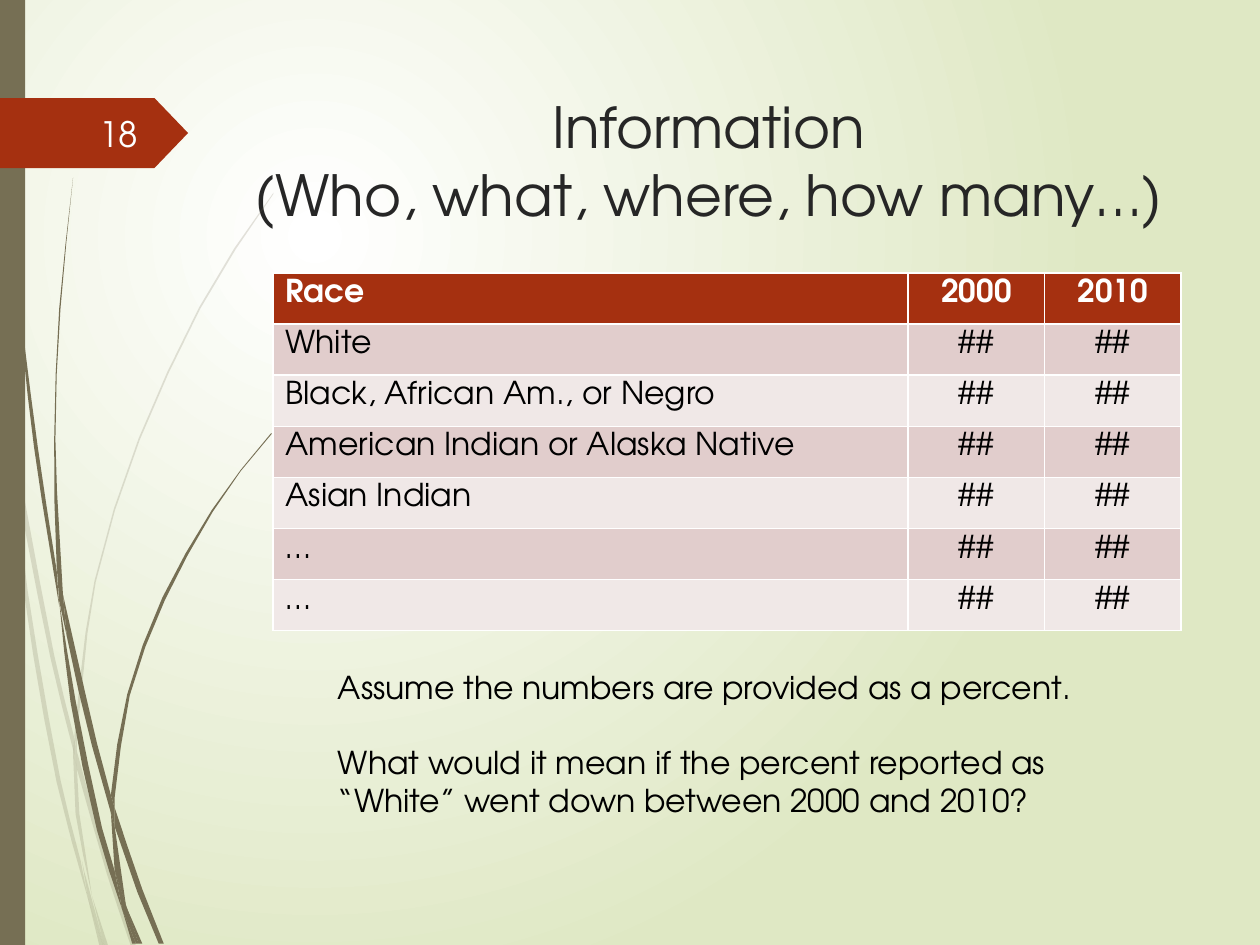
from math import dist

from pptx import Presentation
from pptx.dml.color import RGBColor
from pptx.enum.shapes import MSO_SHAPE as Kind
from pptx.enum.text import MSO_ANCHOR as Anchor, MSO_AUTO_SIZE as Fit, PP_ALIGN as Align
from pptx.oxml import parse_xml
from pptx.oxml.ns import nsdecls, qn
from pptx.util import Pt

FACE = "TeX Gyre Adventor"
RUST, BARK, WHITE, BLACK = "A53010", "766F54", "FFFFFF", "000000"
BANDS = "E1CDCC", "F0E8E7"
RACES = ["White", "Black, African Am., or Negro",
         "American Indian or Alaska Native", "Asian Indian", "…", "…"]
ROWS = [["Race", "2000", "2010"]] + [[race, "##", "##"] for race in RACES]

# Each blade of grass has a downward and an upward edge, in units of 0.72 pt.
PALE = [
    ([(0, 282), (6, 322), (8, 350)], [(7, 344), (0, 299)]),
    ([(10, 345), (43, 520), (59, 586)],
     [(59, 599), (40, 522), (12, 376), (10, 345)]),
    ([(61, 610), (85, 694), (104, 751)],
     [(108, 751), (88, 692), (61, 596)]),
    ([(73, 711), (83, 751)], [(86, 751)]),
    ([(8, 350), (19, 470), (45, 621), (70, 714)],
     [(64, 683), (48, 619), (22, 469), (8, 350)]),
    ([(58, 599), (60, 646), (73, 711)],
     [(63, 646), (61, 608), (58, 599)]),
    ([(217, 153), (186, 197), (158, 244), (110, 348),
      (75, 461), (59, 584), (61, 596)],
     [(61, 584), (76, 462), (111, 349), (159, 245), (187, 198), (217, 154)]),
    ([(70, 714), (79, 751)], [(82, 751)]),
    ([(59, 586), (58, 599), (61, 608)], [(61, 596)]),
    ([(65, 683), (70, 714), (82, 751)], [(83, 751), (67, 692)]),
]
DARK = [
    ([(2, 0), (5, 110), (14, 233), (27, 355), (47, 481)],
     [(45, 453), (30, 355), (15, 232), (6, 109), (3, 0)]),
    ([(50, 472), (53, 505), (73, 592), (88, 645)],
     [(88, 631), (77, 590), (50, 472)]),
    ([(91, 641), (91, 656), (109, 708), (126, 749)],
     [(130, 749), (113, 706), (91, 641)]),
    ([(47, 477), (56, 557), (77, 659), (97, 722)],
     [(91, 691), (81, 657), (60, 556), (47, 477)]),
    ([(58, 141), (47, 245), (43, 349), (45, 449), (49, 472)],
     [(50, 472), (44, 349), (48, 245), (58, 141)]),
    ([(100, 719), (110, 749)], [(113, 749)]),
    ([(45, 449), (47, 477), (53, 505)], [(50, 472)]),
    ([(215, 344), (191, 373), (168, 405), (129, 474),
      (101, 551), (88, 631), (91, 641)],
     [(91, 633), (103, 552), (131, 476), (169, 406), (191, 374), (216, 344)]),
    ([(97, 722), (105, 749)], [(108, 749)]),
    ([(88, 645), (91, 691), (100, 719)], [(91, 656)]),
    ([(88, 631), (88, 645), (91, 656)], [(91, 641)]),
    ([(91, 691), (97, 722), (108, 749)], [(110, 749), (96, 706)]),
]


def color(code):
    return RGBColor.from_string(code)


def paint(shape, code, alpha=None):
    shape.shadow.inherit = False
    shape.fill.solid()
    shape.fill.fore_color.rgb = color(code)
    shape.line.fill.background()
    if alpha:
        tint = shape.element.spPr.find(".//" + qn("a:srgbClr"))
        tint.append(parse_xml(f'<a:alpha {nsdecls("a")} val="{alpha * 1000}"/>'))


def style(para, size, code, align=Align.LEFT, bold=False):
    para.alignment = align
    para.font.color.rgb = color(code)
    form = {"name": FACE, "size": Pt(size), "bold": bold}
    for key, value in form.items():
        setattr(para.font, key, value)


def place(shape, *box):
    for key, value in zip(("left", "top", "width", "height"), box):
        setattr(shape, key, Pt(value))


def smooth(knots):
    """Return points of a cubic curve through the knots, more on long spans."""
    last = len(knots) - 1
    if not last:
        return knots
    slopes = []
    for i in range(last + 1):
        a, b = knots[max(i - 1, 0)], knots[min(i + 1, last)]
        span = dist(a, knots[i]) + dist(knots[i], b)
        slopes.append([(q - p) / span for p, q in zip(a, b)])
    curve = [knots[0]]
    for a, b, m, n in zip(knots, knots[1:], slopes, slopes[1:]):
        size = dist(a, b)
        steps = min(3, 1 + int(size // 60))
        for t in (k / steps for k in range(1, steps + 1)):
            s = 1 - t
            curve.append([
                s * s * (1 + 2 * t) * p + t * t * (3 - 2 * t) * q
                + size * t * s * (s * u - t * v)
                for p, q, u, v in zip(a, b, m, n)])
    return curve


def add_blade(shapes, edges, alpha):
    dots = [(72 * x, 72 * y) for edge in edges for x, y in smooth(edge)]
    pen = shapes.build_freeform(*dots[0], scale=Pt(0.01))
    pen.add_line_segments(dots[1:], close=True)
    paint(pen.convert_to_shape(), BARK, alpha)


def add_block(shapes, kind, code, *box):
    block = shapes.add_shape(kind, *map(Pt, box))
    paint(block, code)
    return block


def add_text(shapes, lines, size, code, *box, align=Align.LEFT, anchor=Anchor.TOP, gap=0):
    frame = shapes.add_textbox(*map(Pt, box)).text_frame
    frame.word_wrap = True
    frame.vertical_anchor = anchor
    frame.text = "\n".join(lines)
    for para in frame.paragraphs:
        style(para, size, code, align)
        para.space_after = Pt(gap)


def add_grid(shapes, rows, *box):
    grid = shapes.add_table(len(rows), len(rows[0]), *map(Pt, box)).table
    for col, wide in zip(grid.columns, (363, 78, 78)):
        col.width = Pt(wide)
    for r, row in enumerate(rows):
        for c, text in enumerate(row):
            cell = grid.cell(r, c)
            cell.text = text
            cell.fill.solid()
            cell.fill.fore_color.rgb = color(BANDS[(r - 1) % 2] if r else RUST)
            style(cell.text_frame.paragraphs[0], 18, BLACK if r else WHITE,
                  Align.CENTER if c else Align.LEFT, bold=not r)


def set_back(slide):
    """Fill the background with a glow centred in the upper left."""
    fill = slide.background.fill
    fill.gradient()
    for stop, code, pos in zip(fill.gradient_stops, (WHITE, "DFE8C4"), (0, 1)):
        stop.color.rgb = color(code)
        stop.position = pos
    grad = slide.element.find(".//" + qn("a:gradFill"))
    grad.replace(grad.find(qn("a:lin")), parse_xml(
        f'<a:path {nsdecls("a")} path="circle"><a:fillToRect l="50000" t="50000" '
        'r="100000" b="100000"/></a:path>'))


def set_title(title, text):
    place(title, 126, 49, 558, 101)
    frame = title.text_frame
    frame.text = text
    form = {"auto_size": Fit.NONE, "vertical_anchor": Anchor.TOP, "word_wrap": True}
    for key, value in form.items():
        setattr(frame, key, value)
    style(frame.paragraphs[0], 32.4, "262626", Align.CENTER)


def main():
    deck = Presentation()
    deck.slide_width, deck.slide_height = Pt(720), Pt(540)
    slide = deck.slides.add_slide(deck.slide_layouts[5])
    shapes = slide.shapes
    set_back(slide)
    for blades, alpha in ((PALE, 20), (DARK, None)):
        for edges in blades:
            add_blade(shapes, edges, alpha)
    add_block(shapes, Kind.RECTANGLE, BARK, 0, 0, 14.4, 540)
    flag = add_block(shapes, Kind.PENTAGON, RUST, 0, 56, 107.5, 40)
    flag.adjustments[0] = 0.48
    set_title(shapes.title, "Information\v(Who, what, where, how many…)")
    add_grid(shapes, ROWS, 156, 156, 519, 204.4)
    add_text(shapes, ["18"], 20, "FEFFFF", 40, 62, 46, 29,
             align=Align.RIGHT, anchor=Anchor.MIDDLE)
    add_text(shapes, ["Assume the numbers are provided as a percent.",
                      "What would it mean if the percent reported as “White” "
                      "went down between 2000 and 2010?"],
             18, BLACK, 186, 378, 450, 94, gap=21.5)
    deck.save("out.pptx")


if __name__ == "__main__":
    main()
